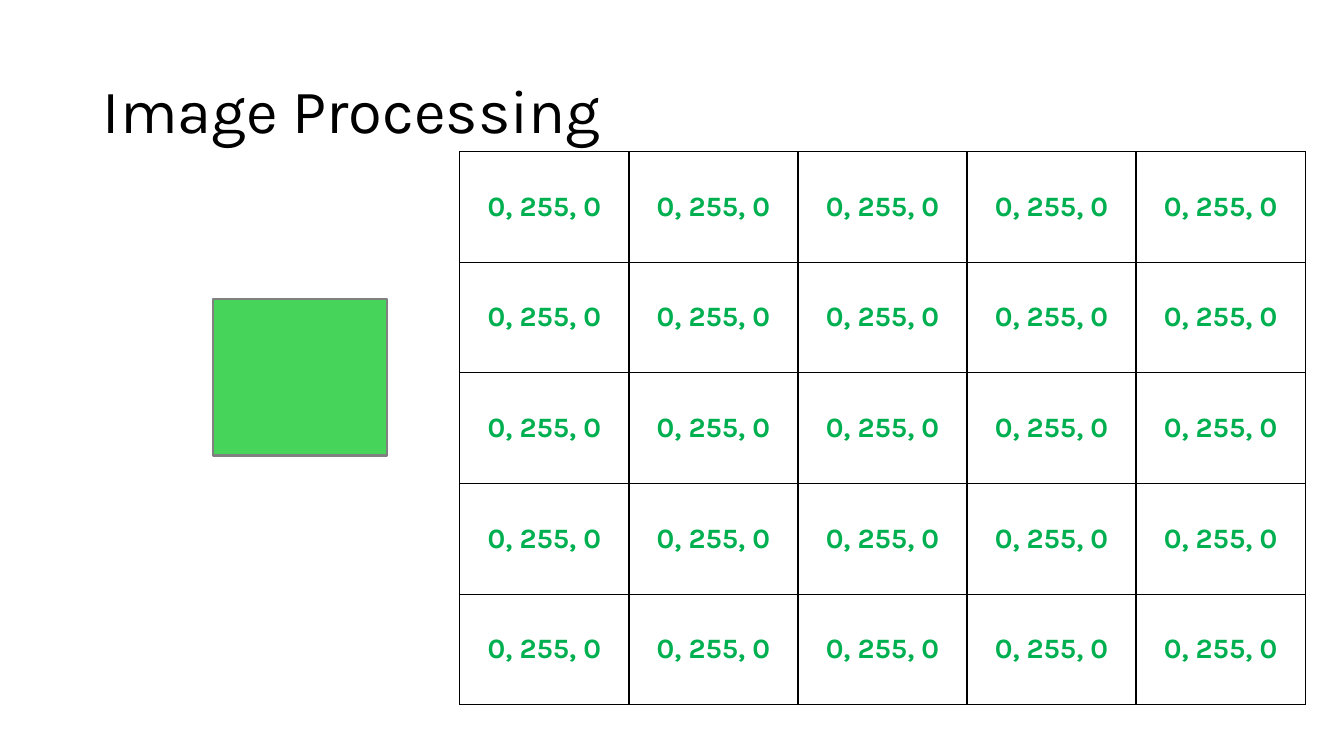
"""Build the Image Processing slide: a green square and its grid of RGB values."""
from dataclasses import dataclass

from lxml import etree
from pptx import Presentation
from pptx.dml.color import RGBColor
from pptx.enum.shapes import MSO_SHAPE
from pptx.enum.text import MSO_ANCHOR, MSO_AUTO_SIZE, PP_ALIGN
from pptx.oxml.ns import qn
from pptx.util import Cm, Pt

RECTANGLE = MSO_SHAPE.RECTANGLE
MIDDLE = MSO_ANCHOR.MIDDLE
NO_AUTOFIT = MSO_AUTO_SIZE.NONE
LEFT, CENTER = PP_ALIGN.LEFT, PP_ALIGN.CENTER
FONT = "Karla"
GRID_SIZE = 5
TITLE_ONLY = 5


@dataclass(frozen=True)
class Box:
    left: float
    top: float
    width: float
    height: float

    def emu(self) -> tuple:
        return Cm(self.left), Cm(self.top), Cm(self.width), Cm(self.height)


@dataclass(frozen=True)
class TextStyle:
    size: float
    color: str
    bold: bool
    align: PP_ALIGN


TITLE_BOX = Box(2.34, 1.02, 29.21, 3.68)
SQUARE_BOX = Box(5.36, 7.54, 4.4, 3.94)
GRID_BOX = Box(11.59, 3.82, 21.3, 13.94)
TITLE_STYLE = TextStyle(44, "000000", False, LEFT)
PIXEL_STYLE = TextStyle(20, "00B050", True, CENTER)


def rgb(color: str) -> RGBColor:
    return RGBColor.from_string(color)


def write(tf, text: str, style: TextStyle) -> None:
    tf.text = text
    p = tf.paragraphs[0]
    p.alignment = style.align
    p.font.name = FONT
    p.font.size = Pt(style.size)
    p.font.bold = style.bold
    p.font.color.rgb = rgb(style.color)


def add_title(s, text: str) -> None:
    title = s.shapes.title
    title.left, title.top, title.width, title.height = TITLE_BOX.emu()
    tf = title.text_frame
    tf.auto_size = NO_AUTOFIT
    tf.vertical_anchor = MIDDLE
    write(tf, text, TITLE_STYLE)
    tf.paragraphs[0].line_spacing = 0.9


def add_square(s, fill: str, line: str) -> None:
    sp = s.shapes.add_shape(RECTANGLE, *SQUARE_BOX.emu())
    sp.shadow.inherit = False
    sp.fill.solid()
    sp.fill.fore_color.rgb = rgb(fill)
    sp.line.color.rgb = rgb(line)
    sp.line.width = Pt(1.5)


def set_borders(cell, color: str, width: float) -> None:
    tc_pr = cell._tc.get_or_add_tcPr()
    for side in ("a:lnL", "a:lnR", "a:lnT", "a:lnB"):
        ln = etree.SubElement(tc_pr, qn(side), w=str(Pt(width)))
        fill = etree.SubElement(ln, qn("a:solidFill"))
        etree.SubElement(fill, qn("a:srgbClr"), val=color)


def add_pixel_grid(s, text: str) -> None:
    table = s.shapes.add_table(GRID_SIZE, GRID_SIZE, *GRID_BOX.emu()).table
    table.first_row = False
    table.horz_banding = False
    for cell in table.iter_cells():
        set_borders(cell, "000000", 1)
        cell.fill.background()
        cell.vertical_anchor = MIDDLE
        write(cell.text_frame, text, PIXEL_STYLE)


def main() -> None:
    prs = Presentation()
    prs.slide_width, prs.slide_height = Cm(33.87), Cm(19.05)
    s = prs.slides.add_slide(prs.slide_layouts[TITLE_ONLY])
    add_title(s, "Image Processing")
    add_square(s, "47D45A", "808080")
    add_pixel_grid(s, "0, 255, 0")
    prs.save("out.pptx")


if __name__ == "__main__":
    main()
